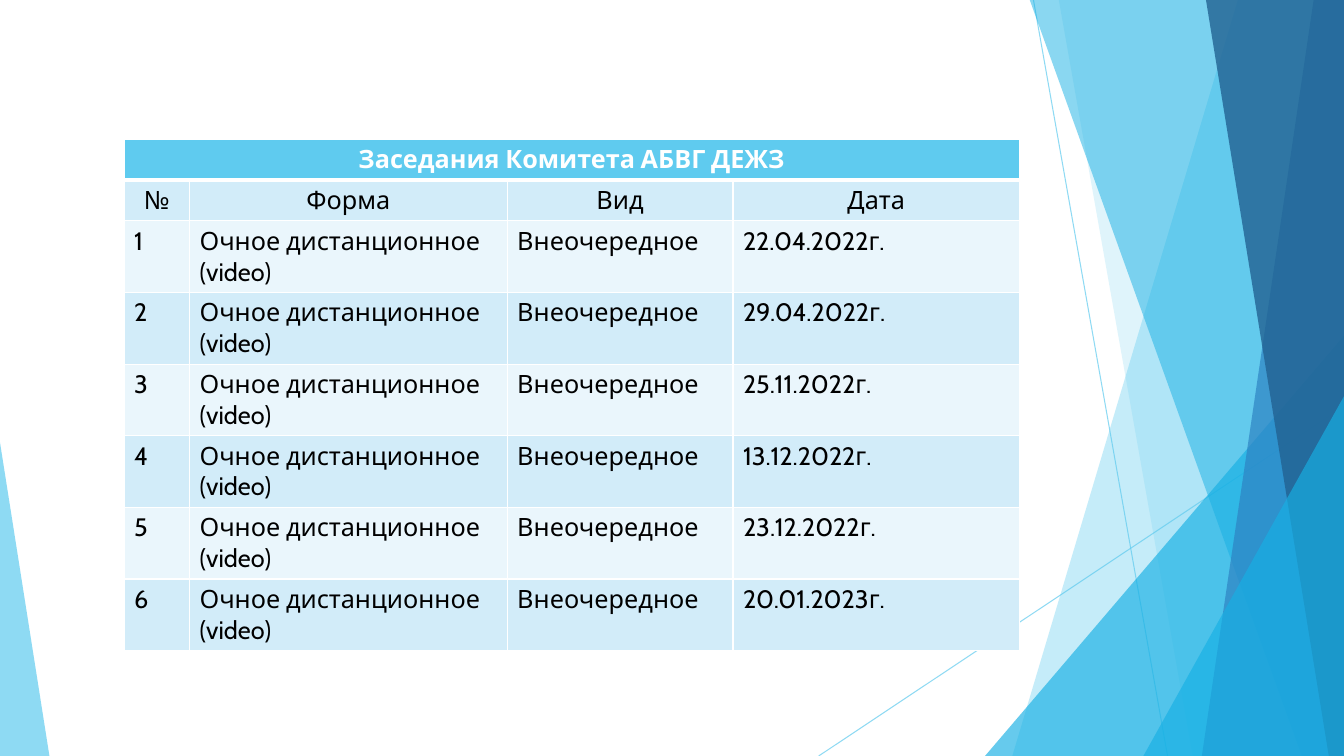
from lxml import etree
from pptx import Presentation
from pptx.dml.color import RGBColor
from pptx.enum import shapes, text
from pptx.oxml import ns
from pptx.util import Inches, Pt

SKY = RGBColor(0x5F, 0xCB, 0xEF)
CYAN = RGBColor(0x17, 0xB0, 0xE4)
BLUE = RGBColor(0x2E, 0x83, 0xC3)
NAVY = RGBColor(0x22, 0x62, 0x92)
PALE = RGBColor(0xEA, 0xF6, 0xFC)
LIGHT = RGBColor(0xD2, 0xEC, 0xF9)
WHITE = RGBColor(0xFF, 0xFF, 0xFF)
BLACK = RGBColor(0, 0, 0)
FONT = "Cabin"
WIDE, HIGH = 13.33, 7.5

TITLE = "Заседания Комитета АБВГ ДЕЖЗ"
HEADS = ["№", "Форма", "Вид", "Дата"]
FORM, KIND = "Очное дистанционное (video)", "Внеочередное"
DATES = ["22.04.2022г.", "29.04.2022г.", "25.11.2022г.",
         "13.12.2022г.", "23.12.2022г.", "20.01.2023г."]
COLS = [0.65, 3.15, 2.24, 2.84]
HEAD_H, ROW_H = 0.4, 0.71

RAYS = [(10.25, 0, 11.58, HIGH), (WIDE, 4.03, 8.12, HIGH)]
BANDS = [("band", 12.28, 10.04, SKY, 36), ("band", 10.5, 11.83, SKY, 20),
         ("wedge", (9.77, 3.33, 3.56), 1, CYAN, 66),
         ("band", 10.21, 12.91, CYAN, 50), ("band", 13.03, 11.92, BLUE, 70),
         ("band", 11.96, 13.18, NAVY, 80),
         ("wedge", (11.34, 3.93, 1.99), 1, CYAN, 66),
         ("wedge", (0, 4.39, 0.49), 0, SKY, 70)]


def fade(node, pct):
    """Set the opacity of the colour found under node."""
    tone = next(node.iter(ns.qn("a:srgbClr")))
    etree.SubElement(tone, ns.qn("a:alpha"), val=str(pct * 1000))


def add_ray(slide, ends):
    """Draw one thin translucent line."""
    x1, y1, x2, y2 = map(Inches, ends)
    ray = slide.shapes.add_connector(shapes.MSO_CONNECTOR.STRAIGHT, x1, y1, x2, y2)
    ray.line.color.rgb = SKY
    ray.line.width = Pt(0.75)
    fade(ray._element.spPr, 70)
    etree.SubElement(ray._element.spPr, ns.qn("a:effectLst"))


def add_band(slide, kind, first, second, tone, pct):
    """Draw a band (top x, bottom x) or a wedge (left, top, width; apex)."""
    if kind == "band":
        spots = [(first, -0.01), (WIDE, -0.01), (WIDE, HIGH), (second, HIGH)]
        spots = [(Inches(x), Inches(y)) for x, y in spots]
        pen = slide.shapes.build_freeform(*spots[0], scale=1.0)
        pen.add_line_segments(spots[1:], close=True)
        shape = pen.convert_to_shape()
    else:
        left, top, width = first
        shape = slide.shapes.add_shape(
            shapes.MSO_SHAPE.ISOSCELES_TRIANGLE, Inches(left), Inches(top),
            Inches(width), Inches(HIGH - top))
        shape.adjustments[0] = second
    shape.shadow.inherit = False
    shape.line.fill.background()
    shape.fill.solid()
    shape.fill.fore_color.rgb = tone
    fade(shape._element.spPr, pct)


def edge(cell, low):
    """Give a cell white borders, the lower one low points wide."""
    props = cell._tc.get_or_add_tcPr()
    for spot, side in enumerate("LRTB"):
        size = Pt(low if side == "B" else 1)
        line = etree.Element(ns.qn("a:ln" + side), w=str(int(size)))
        fill = etree.SubElement(line, ns.qn("a:solidFill"))
        etree.SubElement(fill, ns.qn("a:srgbClr"), val=str(WHITE))
        props.insert(spot, line)


def add_grid(slide):
    """Add the table of meetings."""
    rows = [[TITLE, "", "", ""], HEADS]
    rows += [[str(n), FORM, KIND, date] for n, date in enumerate(DATES, 1)]
    highs = [HEAD_H] * 2 + [ROW_H] * len(DATES)
    grid = slide.shapes.add_table(
        len(rows), len(COLS), Inches(1.23), Inches(1.38),
        Inches(sum(COLS)), Inches(sum(highs))).table
    grid.first_row = grid.horz_banding = False
    for col, width in zip(grid.columns, COLS):
        col.width = Inches(width)
    for r, (words, high) in enumerate(zip(rows, highs)):
        grid.rows[r].height = Inches(high)
        for c, word in enumerate(words):
            cell = grid.cell(r, c)
            cell.fill.solid()
            cell.fill.fore_color.rgb = SKY if r == 0 else LIGHT if r % 2 else PALE
            edge(cell, 1 if r else 3)
            cell.text_frame.text = word
            para = cell.text_frame.paragraphs[0]
            para.alignment = text.PP_ALIGN.CENTER if r < 2 else text.PP_ALIGN.LEFT
            for run in para.runs:
                run.font.name = FONT
                run.font.size = Pt(18)
                run.font.bold = r == 0
                run.font.color.rgb = BLACK if r else WHITE
    grid.cell(0, 0).merge(grid.cell(0, len(COLS) - 1))


def main():
    """Build the slide and save it."""
    deck = Presentation()
    deck.slide_width, deck.slide_height = Inches(WIDE), Inches(HIGH)
    slide = deck.slides.add_slide(deck.slide_layouts[6])
    for ends in RAYS:
        add_ray(slide, ends)
    for band in BANDS:
        add_band(slide, *band)
    add_grid(slide)
    deck.save("out.pptx")


if __name__ == "__main__":
    main()
